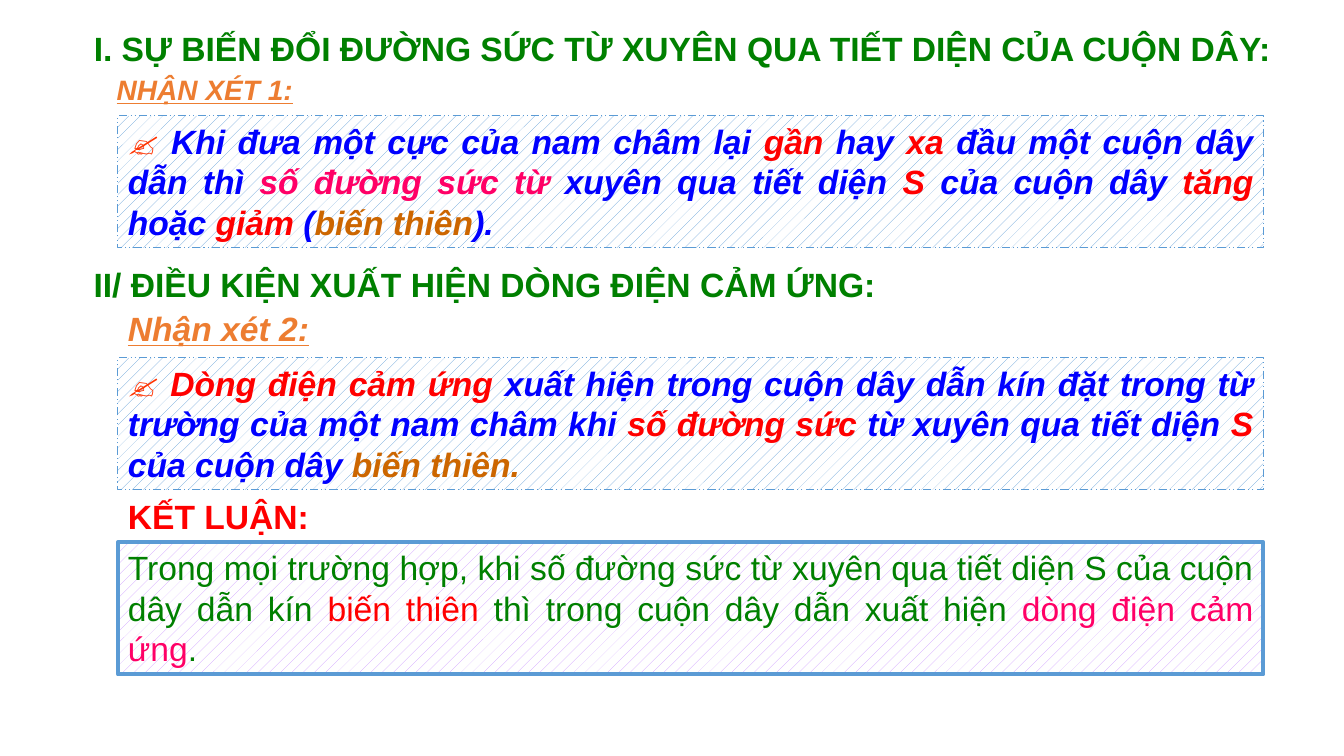
import pptx
import pptx.util
import pptx.dml.color
import pptx.enum.dml
import pptx.enum.shapes
import pptx.enum.text
from dataclasses import dataclass

Inches = pptx.util.Inches
Align = pptx.enum.text.PP_ALIGN


@dataclass(frozen=True)
class Theme:
    font: str = "Arial"
    small: int = 20
    body: int = 24
    white: str = "FFFFFF"
    green: str = "008000"
    orange: str = "ED7D31"
    blue: str = "0000FF"
    red: str = "FF0000"
    pink: str = "FF0066"
    brown: str = "CC6600"
    hand: str = "FF3300"
    steel: str = "5B9BD5"
    lilac: str = "CC99FF"


THEME = Theme()


def color(code):
    return pptx.dml.color.RGBColor.from_string(code)


def write(frame, text, tint=THEME.green, size=THEME.body, bold=False,
          slant=False, under=False, align=Align.LEFT):
    para = frame.paragraphs[0]
    para.alignment = align
    para.line_spacing = 1.0
    para.space_before = pptx.util.Pt(0)
    run = para.add_run()
    run.text = text
    font = run.font
    font.name = THEME.font
    font.size = pptx.util.Pt(size)
    font.color.rgb = color(tint)
    font.bold = bold
    font.italic = slant
    font.underline = under


def setup(shape):
    frame = shape.text_frame
    frame.word_wrap = True
    frame.auto_size = pptx.enum.text.MSO_AUTO_SIZE.SHAPE_TO_FIT_TEXT
    frame.vertical_anchor = pptx.enum.text.MSO_ANCHOR.TOP
    return frame


def title(slide, text, left, top, width, height):
    shape = slide.shapes.title
    shape.left, shape.top = Inches(left), Inches(top)
    shape.width, shape.height = Inches(width), Inches(height)
    write(setup(shape), text, bold=True)


def label(slide, text, left, top, width, height=0.5, **style):
    shape = slide.shapes.add_textbox(
        Inches(left), Inches(top), Inches(width), Inches(height))
    write(setup(shape), text, bold=True, **style)


def panel(slide, top, parts, hatch=THEME.steel, weight=0.75, dash=None,
          lead="", strong=False):
    shape = slide.shapes.add_shape(
        pptx.enum.shapes.MSO_SHAPE.RECTANGLE,
        Inches(1.17), Inches(top), Inches(11.36), Inches(1.31))
    shape.shadow.inherit = False
    shape.fill.patterned()
    shape.fill.pattern = pptx.enum.dml.MSO_PATTERN.PERCENT_10
    shape.fill.fore_color.rgb = color(hatch)
    shape.fill.back_color.rgb = color(THEME.white)
    shape.line.color.rgb = color(THEME.steel)
    shape.line.width = pptx.util.Pt(weight)
    if dash:
        shape.line.dash_style = dash
    frame = setup(shape)
    if lead:
        write(frame, lead, tint=THEME.hand, align=Align.JUSTIFY)
    for text, tint in parts:
        write(frame, text, tint=tint, bold=strong, slant=strong,
              align=Align.JUSTIFY)


def main():
    deck = pptx.Presentation()
    deck.slide_width, deck.slide_height = Inches(13.33), Inches(7.5)
    slide = deck.slides.add_slide(deck.slide_layouts[5])
    blue, red, green = THEME.blue, THEME.red, THEME.green
    remark = dict(tint=THEME.orange, slant=True, under=True)
    note = dict(lead="✍ ", strong=True,
                dash=pptx.enum.dml.MSO_LINE.DASH_DOT_DOT)

    title(slide, "I. SỰ BIẾN ĐỔI ĐƯỜNG SỨC TỪ XUYÊN QUA TIẾT DIỆN CỦA CUỘN DÂY:",
          0.83, 0.23, 12.02, 0.5)
    label(slide, "NHẬN XÉT 1:", 1.06, 0.67, 2.17, 0.43,
          size=THEME.small, **remark)
    panel(slide, 1.15, [
        ("Khi đưa một cực của nam châm lại ", blue),
        ("gần", red),
        (" hay ", blue),
        ("xa", red),
        (" đầu một cuộn dây dẫn thì ", blue),
        ("số đường sức từ", THEME.pink),
        (" xuyên qua tiết diện ", blue),
        ("S", red),
        (" của cuộn dây ", blue),
        ("tăng", red),
        (" hoặc ", blue),
        ("giảm", red),
        (" (", blue),
        ("biến thiên", THEME.brown),
        (").", blue),
    ], **note)

    label(slide, "II/ ĐIỀU KIỆN XUẤT HIỆN DÒNG ĐIỆN CẢM ỨNG:", 0.83, 2.57, 8.4)
    label(slide, "Nhận xét 2:", 1.17, 3.01, 2.75, **remark)
    panel(slide, 3.55, [
        ("Dòng điện cảm ứng", red),
        (" xuất hiện trong cuộn dây dẫn kín đặt trong từ trường của một nam châm khi ", blue),
        ("số đường sức", red),
        (" từ xuyên qua tiết diện ", blue),
        ("S", red),
        (" của cuộn dây ", blue),
        ("biến thiên.", THEME.brown),
    ], **note)

    label(slide, "KẾT LUẬN:", 1.17, 4.87, 3.17, tint=red)
    panel(slide, 5.38, [
        ("Trong mọi trường hợp, khi số đường sức từ xuyên qua tiết diện S của cuộn dây dẫn kín ", green),
        ("biến thiên", red),
        (" thì trong cuộn dây dẫn xuất hiện ", green),
        ("dòng điện cảm ứng", THEME.pink),
        (".", green),
    ], hatch=THEME.lilac, weight=3)

    deck.save("out.pptx")


if __name__ == "__main__":
    main()
